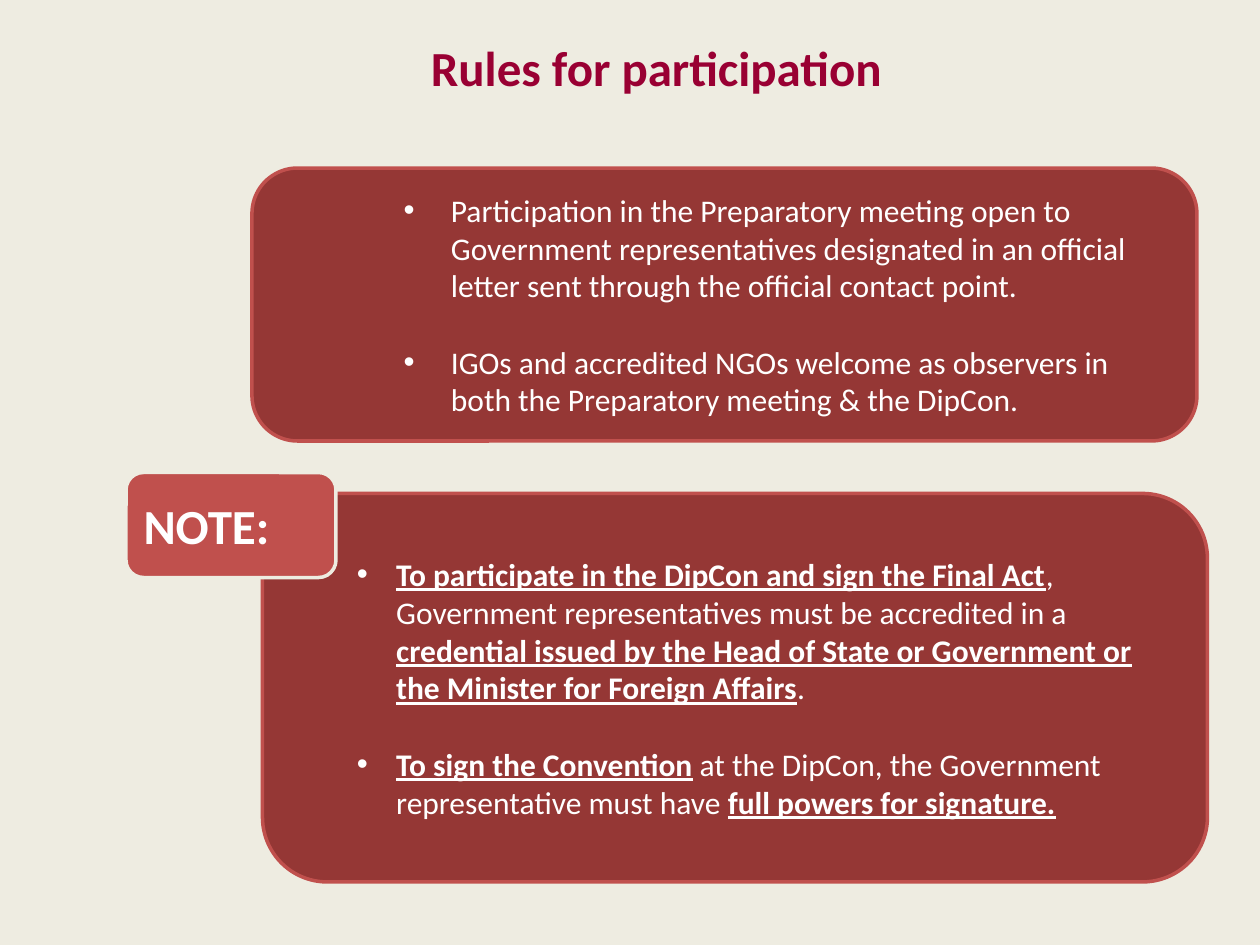
"""Build the slide with the rules for taking part in the conference."""

from dataclasses import dataclass

import lxml.etree
import pptx
import pptx.dml.color
import pptx.enum.shapes
import pptx.enum.text
import pptx.oxml.ns
import pptx.util

FONT = "Calibri"
CREAM, WHITE, CRIMSON = "EEECE1", "FFFFFF", "990033"
DARK_RED, LIGHT_RED = "953735", "C0504D"


@dataclass(frozen=True)
class Box:
    left: float
    top: float
    width: float
    height: float


@dataclass(frozen=True)
class Phrase:
    text: str
    stressed: bool = False


@dataclass(frozen=True)
class RulePanel:
    box: Box
    level: int
    margin: float
    hanging: float
    rules: tuple[tuple[Phrase, ...], ...]


PANELS = (
    RulePanel(Box(144, 96, 540, 156), 2, 99, 27, (
        (Phrase("Participation in the Preparatory meeting open to Government "
                "representatives designated in an official letter sent "
                "through the official contact point."),),
        (Phrase("IGOs and accredited NGOs welcome as observers in both the "
                "Preparatory meeting & the DipCon."),),
    )),
    RulePanel(Box(150, 282, 540, 222), 1, 58.5, 22.5, (
        (Phrase("To participate in the DipCon and sign the Final Act", True),
         Phrase(", Government representatives must be accredited in a "),
         Phrase("credential issued by the Head of State or Government or "
                "the Minister for Foreign Affairs", True),
         Phrase(".")),
        (Phrase("To sign the Convention", True),
         Phrase(" at the DipCon, the Government representative must have "),
         Phrase("full powers for signature.", True)),
    )),
)


def paint(color_format, hex_color: str) -> None:
    """Give a colour format an RGB value."""
    color_format.rgb = pptx.dml.color.RGBColor.from_string(hex_color)


def style(font, size: float, hex_color: str, bold: bool = False) -> None:
    """Set typeface, size, colour and weight."""
    font.name = FONT
    font.size = pptx.util.Pt(size)
    font.bold = bold
    font.fill.solid()
    paint(font.fill.fore_color, hex_color)


def place(shape, box: Box) -> None:
    """Move and size a shape."""
    shape.left, shape.top = pptx.util.Pt(box.left), pptx.util.Pt(box.top)
    shape.width, shape.height = pptx.util.Pt(box.width), pptx.util.Pt(box.height)


def add_rounded(slide, box: Box, fill: str, outline: str):
    """Add a rounded rectangle and return its text frame."""
    shape = slide.shapes.add_shape(
        pptx.enum.shapes.MSO_SHAPE.ROUNDED_RECTANGLE, 0, 0, 0, 0)
    place(shape, box)
    shape.shadow.inherit = False
    shape.fill.solid()
    paint(shape.fill.fore_color, fill)
    paint(shape.line.color, outline)
    shape.line.width = pptx.util.Pt(2)
    frame = shape.text_frame
    frame.word_wrap = True
    frame.vertical_anchor = pptx.enum.text.MSO_ANCHOR.MIDDLE
    frame.paragraphs[0].alignment = pptx.enum.text.PP_ALIGN.LEFT
    return frame


def add_bullet(paragraph, margin: float, hanging: float) -> None:
    """Give a paragraph a round bullet with a hanging indent."""
    properties = paragraph._p.get_or_add_pPr()
    properties.set("marL", str(pptx.util.Pt(margin)))
    properties.set("indent", str(-pptx.util.Pt(hanging)))
    for tag, attribute, value in (("a:buFont", "typeface", "Arial"),
                                  ("a:buChar", "char", "•")):
        lxml.etree.SubElement(
            properties, pptx.oxml.ns.qn(tag)).set(attribute, value)


def add_panel(slide, panel: RulePanel) -> None:
    """Draw a panel with its bulleted rules."""
    frame = add_rounded(slide, panel.box, DARK_RED, LIGHT_RED)
    for index, rule in enumerate(panel.rules):
        paragraph = frame.add_paragraph() if index else frame.paragraphs[0]
        paragraph.level = panel.level
        paragraph.alignment = pptx.enum.text.PP_ALIGN.LEFT
        add_bullet(paragraph, panel.margin, panel.hanging)
        if index:
            paragraph.space_before = pptx.util.Pt(22)
        style(paragraph.font, 18, WHITE)
        for phrase in rule:
            run = paragraph.add_run()
            run.text = phrase.text
            if phrase.stressed:
                run.font.bold = run.font.underline = True


def main() -> None:
    """Build and save the presentation."""
    presentation = pptx.Presentation()
    presentation.slide_width = pptx.util.Pt(720)
    presentation.slide_height = pptx.util.Pt(540)
    slide = presentation.slides.add_slide(presentation.slide_layouts[5])
    slide.background.fill.solid()
    paint(slide.background.fill.fore_color, CREAM)

    heading = slide.shapes.title
    place(heading, Box(102, 16, 546, 45))
    heading.text_frame.text = "Rules for participation"
    heading.text_frame.vertical_anchor = pptx.enum.text.MSO_ANCHOR.MIDDLE
    heading_line = heading.text_frame.paragraphs[0]
    heading_line.alignment = pptx.enum.text.PP_ALIGN.CENTER
    style(heading_line.font, 28, CRIMSON, bold=True)

    for panel in PANELS:
        add_panel(slide, panel)

    note_line = add_rounded(
        slide, Box(72, 270, 120, 60), LIGHT_RED, CREAM).paragraphs[0]
    note_line.text = "NOTE:"
    style(note_line.font, 28, WHITE, bold=True)

    presentation.save("out.pptx")


if __name__ == "__main__":
    main()
